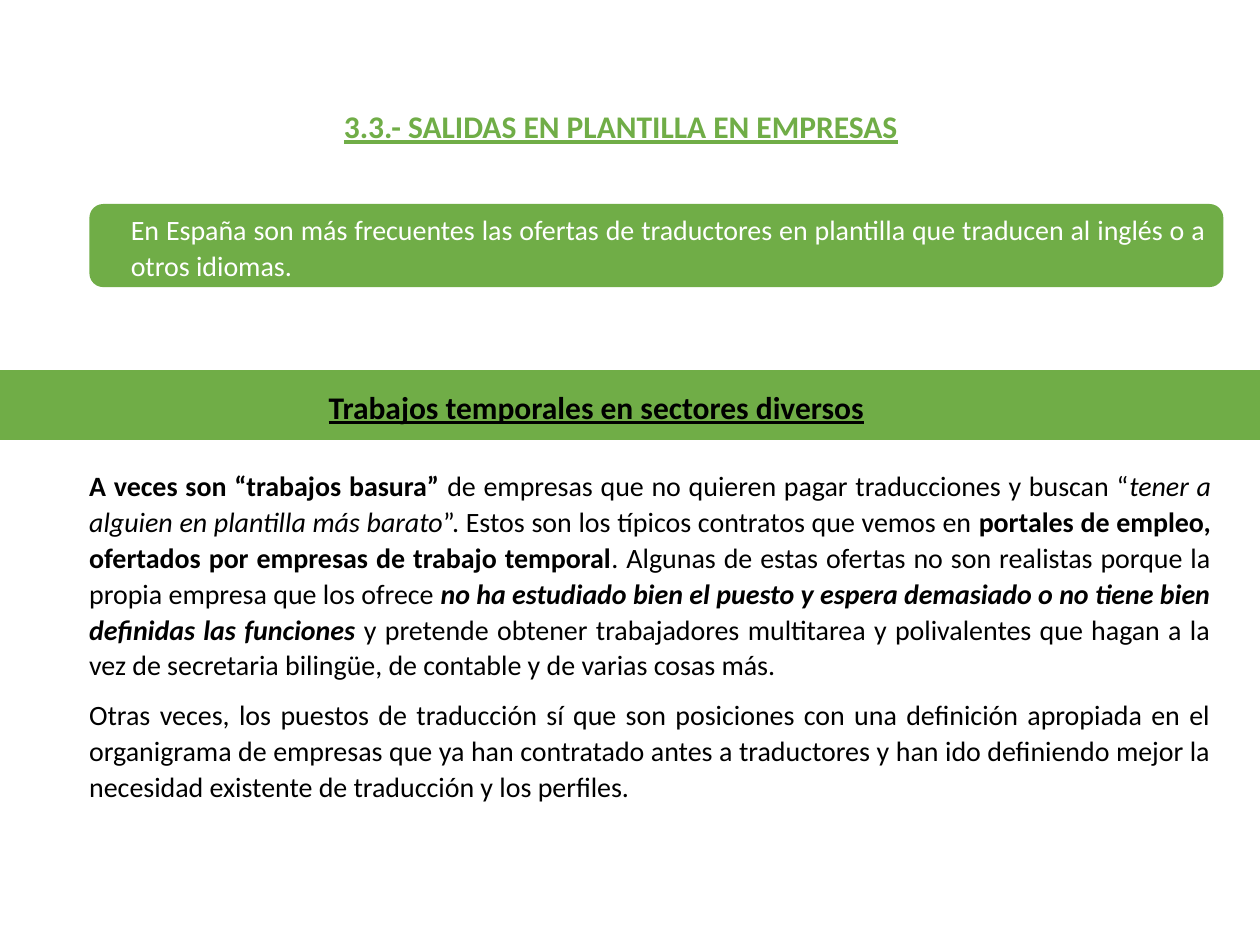
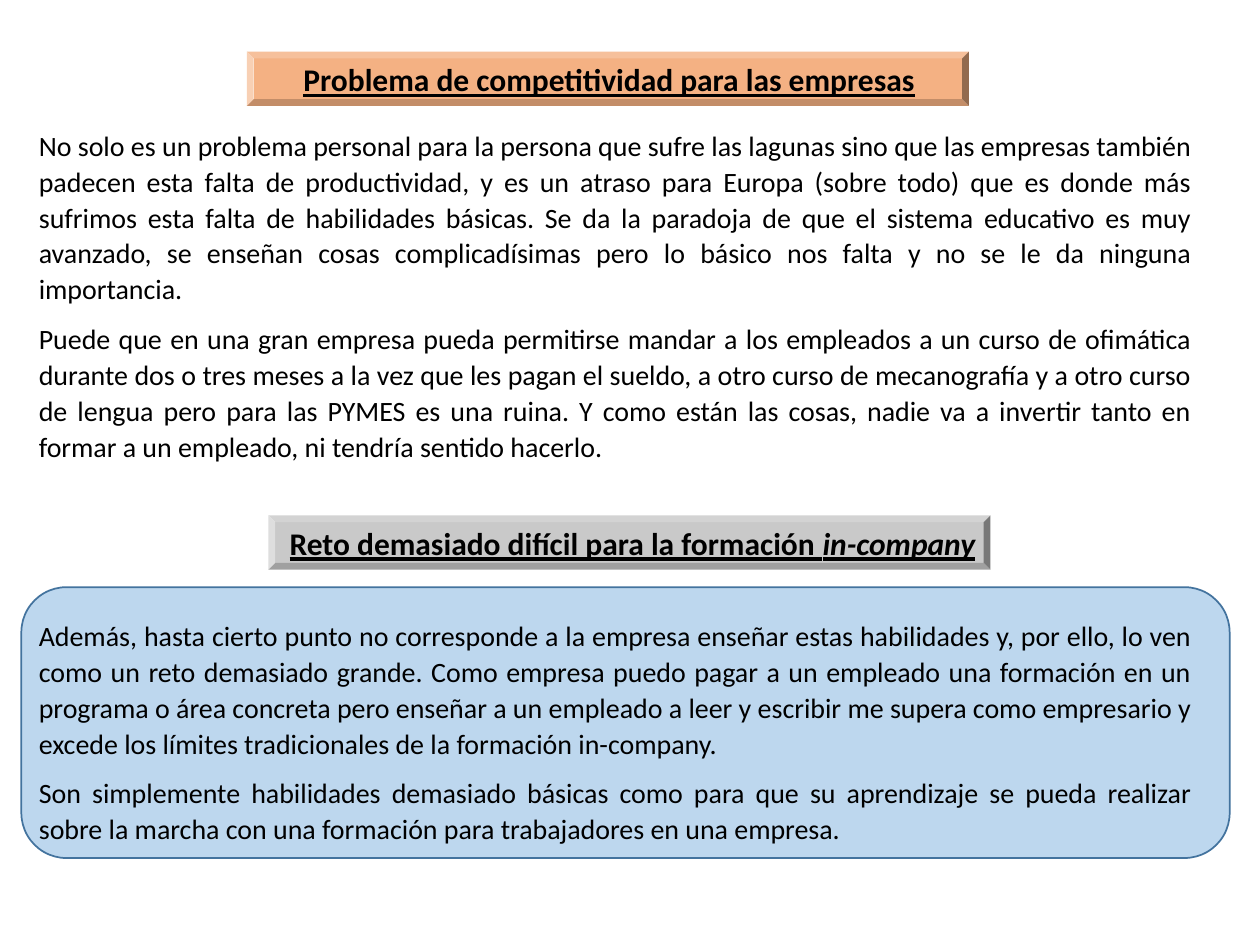
from dataclasses import dataclass

from pptx import Presentation
from pptx.dml.color import RGBColor
from pptx.enum.shapes import MSO_SHAPE
from pptx.enum.text import MSO_AUTO_SIZE, PP_ALIGN
from pptx.util import Pt

BAND, ROUNDED, BEVEL = MSO_SHAPE.FLOWCHART_PROCESS, MSO_SHAPE.ROUNDED_RECTANGLE, MSO_SHAPE.BEVEL
LEFT, JUSTIFY = PP_ALIGN.LEFT, PP_ALIGN.JUSTIFY
FIT_SHAPE = MSO_AUTO_SIZE.SHAPE_TO_FIT_TEXT


@dataclass(frozen=True)
class Theme:
    """Colours, font and type sizes that the slides share."""
    font: str = "Calibri"
    heading_size: int = 18
    body_size: int = 16
    heading_height: int = 31
    line_spacing: float = 1.07
    space_after: int = 8
    ink: str = "000000"
    white: str = "FFFFFF"
    green: str = "70AD47"
    orange: str = "F4B183"
    grey: str = "C9C9C9"
    sky: str = "BDD7EE"
    sky_edge: str = "43739E"


@dataclass(frozen=True)
class Box:
    """A region in points."""
    left: float
    top: float
    width: float
    height: float

    def inner(self, dx, dy, width, height):
        """Return a box offset from this one's top left corner."""
        return Box(self.left + dx, self.top + dy, width, height)

    def lengths(self):
        """Return the four lengths in the order that shapes take them."""
        return [Pt(v) for v in (self.left, self.top, self.width, self.height)]


THEME = Theme()
BOLD, ITALIC = {"bold": True}, {"italic": True}
HEADING = {"size": Pt(THEME.heading_size), "bold": True, "underline": True}
BODY = {"size": Pt(THEME.body_size)}

STAFF_OFFERS = [[(
    "En España son más frecuentes las ofertas de traductores en plantilla que traducen "
    "al inglés o a otros idiomas. ", {})]]

TEMPORARY_JOBS = [
    [("A veces son “trabajos basura”", BOLD),
     (" de empresas que no quieren pagar traducciones y buscan “", {}),
     ("tener a alguien en plantilla más barato", ITALIC),
     ("”. Estos son los típicos contratos que vemos en ", {}),
     ("portales de empleo, ofertados por empresas de trabajo temporal", BOLD),
     (". Algunas de estas ofertas no son realistas porque la propia empresa que los ofrece ", {}),
     ("no ha estudiado bien el puesto y espera demasiado o no tiene bien definidas las "
      "funciones", BOLD | ITALIC),
     (" y pretende obtener trabajadores multitarea y polivalentes que hagan a la vez de "
      "secretaria bilingüe, de contable y de varias cosas más.", {})],
    [("Otras veces, los puestos de traducción sí que son posiciones con una definición "
      "apropiada en el organigrama de empresas que ya han contratado antes a traductores y "
      "han ido definiendo mejor la necesidad existente de traducción y los perfiles.", {})],
]

COMPETITIVENESS = [
    [("No solo es un problema personal para la persona que sufre las lagunas sino que las "
      "empresas también padecen esta falta de productividad, y es un atraso para Europa (sobre "
      "todo) que es donde más sufrimos esta falta de habilidades básicas. Se da la paradoja de "
      "que el sistema educativo es muy avanzado, se enseñan cosas complicadísimas pero lo "
      "básico nos falta y no se le da ninguna importancia.", {})],
    [("Puede que en una gran empresa pueda permitirse mandar a los empleados a un curso de "
      "ofimática durante dos o tres meses a la vez que les pagan el sueldo, a otro curso de "
      "mecanografía y a otro curso de lengua pero para las PYMES es una ruina. Y como están las "
      "cosas, nadie va a invertir tanto en formar a un empleado, ni tendría sentido "
      "hacerlo.", {})],
]

TRAINING_CHALLENGE = [
    [("Además, hasta cierto punto no corresponde a la empresa enseñar estas habilidades y, por "
      "ello, lo ven como un reto demasiado grande. Como empresa puedo pagar a un empleado una "
      "formación en un programa o área concreta pero enseñar a un empleado a leer y escribir me "
      "supera como empresario y excede los límites tradicionales de la formación "
      "in-company.", {})],
    [("Son simplemente habilidades demasiado básicas como para que su aprendizaje se pueda "
      "realizar sobre la marcha con una formación para trabajadores en una empresa.", {})],
]


def add_panel(slide, box, outline, fill, edge=None):
    """Draw a flat filled shape, with a thin edge if a colour is given."""
    panel = slide.shapes.add_shape(outline, *box.lengths())
    panel.shadow.inherit = False
    panel.fill.solid()
    panel.fill.fore_color.rgb = RGBColor.from_string(fill)
    if edge:
        panel.line.color.rgb = RGBColor.from_string(edge)
        panel.line.width = Pt(1)
    else:
        panel.line.fill.background()


def add_text(slide, box, paragraphs, style, align=JUSTIFY, color=THEME.ink, wrap=True):
    """Write paragraphs of (words, format) runs over a base style."""
    frame = slide.shapes.add_textbox(*box.lengths()).text_frame
    frame.word_wrap = wrap
    frame.auto_size = FIT_SHAPE
    layout = {"alignment": align, "line_spacing": THEME.line_spacing,
              "space_after": Pt(THEME.space_after)}
    for index, runs in enumerate(paragraphs):
        paragraph = frame.add_paragraph() if index else frame.paragraphs[0]
        for name, value in layout.items():
            setattr(paragraph, name, value)
        for words, emphasis in runs:
            run = paragraph.add_run()
            run.text = words
            for name, value in ({"name": THEME.font} | style | emphasis).items():
                setattr(run.font, name, value)
            run.font.color.rgb = RGBColor.from_string(color)


def add_heading(slide, box, runs, color=THEME.ink, wrap=True):
    """Write one underlined heading line."""
    add_text(slide, box, [runs], HEADING, LEFT, color, wrap)


def add_callout(slide, box, paragraphs):
    """Place white text on a rounded green panel."""
    add_panel(slide, box, ROUNDED, THEME.green)
    add_text(slide, box.inner(16.6, 0, box.width - 19.4, box.height), paragraphs, BODY,
             color=THEME.white)


def add_band(slide, box, runs):
    """Place a heading on a green band across the slide."""
    add_panel(slide, box, BAND, THEME.green)
    add_heading(slide, box.inner(180.7, 5, 322.6, THEME.heading_height), runs, wrap=False)


def add_plaque(slide, box, runs, fill, indent, width):
    """Place a heading on a bevelled plaque."""
    add_panel(slide, box, BEVEL, fill)
    add_heading(slide, box.inner(indent, 0, width, box.height), runs)


def add_sky_panel(slide, box, paragraphs):
    """Place body text on a rounded, outlined blue panel."""
    add_panel(slide, box, ROUNDED, THEME.sky, THEME.sky_edge)
    add_text(slide, box.inner(2.9, 13, 673.2, 139), paragraphs, BODY)


def build_staff_jobs(slide):
    """Build the slide on staff jobs in companies."""
    add_heading(slide, Box(189.4, 56.2, 334.8, THEME.heading_height),
                [("3.3.- SALIDAS EN PLANTILLA EN EMPRESAS", {})], THEME.green, wrap=False)
    add_callout(slide, Box(51.1, 116.6, 648, 47.5), STAFF_OFFERS)
    add_band(slide, Box(0, 211.7, 720, 39.6),
             [("Trabajos temporales en sectores diversos", {})])
    add_text(slide, Box(43.9, 262.8, 655.2, 200.9), TEMPORARY_JOBS, BODY)


def build_company_problems(slide):
    """Build the slide on competitiveness and in-company training."""
    add_plaque(slide, Box(141.1, 29.5, 412.6, THEME.heading_height),
               [("Problema de competitividad para las empresas", {})],
               THEME.orange, 25.2, 371.5)
    add_text(slide, Box(15.1, 68.4, 673.2, 202.3), COMPETITIVENESS, BODY)
    add_plaque(slide, Box(153.4, 294.5, 412.6, THEME.heading_height),
               [("Reto demasiado difícil para la formación ", {}), ("in-company", ITALIC)],
               THEME.grey, 5, 411.8)
    add_sky_panel(slide, Box(12.2, 335.5, 690.5, 154.8), TRAINING_CHALLENGE)


def main():
    """Build both slides and save the presentation."""
    deck = Presentation()
    deck.slide_width, deck.slide_height = Pt(720), Pt(540)
    blank = deck.slide_layouts[6]
    for build in (build_staff_jobs, build_company_problems):
        build(deck.slides.add_slide(blank))
    deck.save("out.pptx")


if __name__ == "__main__":
    main()
